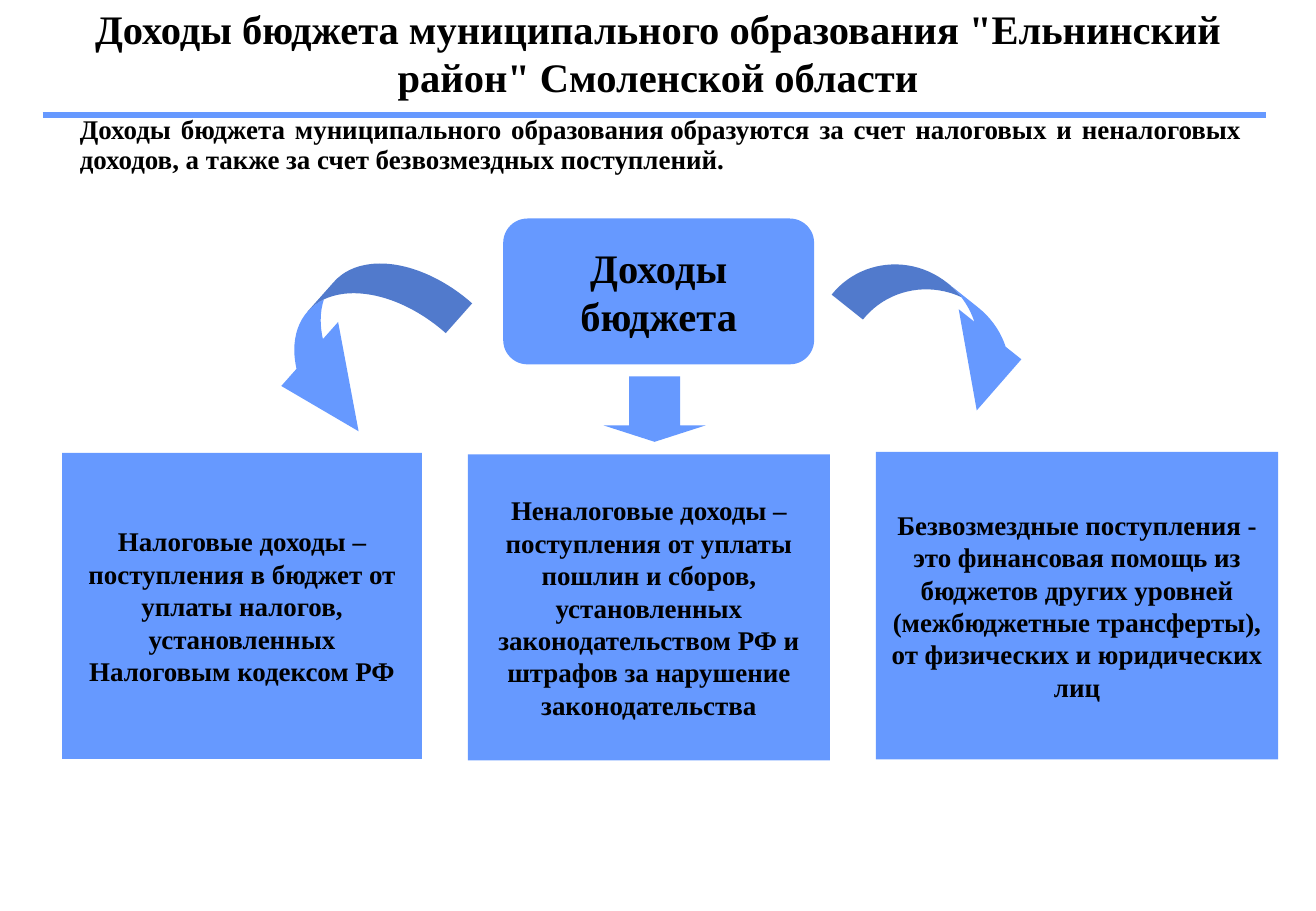
from lxml import etree
from pptx import Presentation
from pptx.dml.color import RGBColor
from pptx.enum.shapes import MSO_CONNECTOR, MSO_SHAPE
from pptx.enum.text import MSO_ANCHOR, PP_ALIGN
from pptx.oxml.ns import qn
from pptx.util import Cm, Pt

RECT = MSO_SHAPE.RECTANGLE
ROUND = MSO_SHAPE.ROUNDED_RECTANGLE
DOWN = MSO_SHAPE.DOWN_ARROW
CURVE_DOWN = MSO_SHAPE.CURVED_DOWN_ARROW
CURVE_UP = MSO_SHAPE.CURVED_UP_ARROW
STRAIGHT = MSO_CONNECTOR.STRAIGHT
TOP, MIDDLE = MSO_ANCHOR.TOP, MSO_ANCHOR.MIDDLE
CENTER, JUSTIFY = PP_ALIGN.CENTER, PP_ALIGN.JUSTIFY

FONT = "Times New Roman"
BLUE, BLACK = "6699FF", "000000"

TITLE = 'Доходы бюджета муниципального образования "Ельнинский район" Смоленской области'
INTRO = [
    ("Доходы бюджета муниципального образования", 16),
    (" ", 7),
    ("образуются за счет налоговых и неналоговых доходов, "
     "а также за счет безвозмездных поступлений.", 16),
]
# Left, top, width, height, side inset, text
CARDS = [
    (0, 4.9, 7.52, 6.4, 0.3,
     "Налоговые доходы – поступления в бюджет от уплаты налогов, "
     "установленных Налоговым кодексом РФ"),
    (8.48, 4.93, 7.57, 6.4, 0,
     "Неналоговые доходы – поступления от уплаты пошлин и сборов, установленных "
     "законодательством РФ и штрафов за нарушение законодательства"),
    (17.01, 4.88, 8.41, 6.43, 0.3,
     "Безвозмездные поступления - это финансовая помощь из бюджетов других уровней "
     "(межбюджетные трансферты), от физических и юридических лиц"),
]
# Kind, left, top, width, height, turn, adjustments
ARROWS = [
    (CURVE_DOWN, 16.1, 1.55, 4.72, 1.7, 38.6, (0.492, 0.987, 0.834)),
    (CURVE_UP, 3.93, 1.4, 4.47, 2.46, 131.6, (0.338, 0.727, 0.747)),
    (DOWN, 11.32, 3.3, 2.13, 1.37, 0, (0.5, 0.25)),
]


def color(code):
    return RGBColor.from_string(code)


def write(shape, runs, align, anchor, side, edge):
    """Fill a shape with one bold paragraph made of (text, size) runs."""
    frame = shape.text_frame
    frame.word_wrap = True
    frame.vertical_anchor = anchor
    frame.margin_left = frame.margin_right = Cm(side)
    frame.margin_top = frame.margin_bottom = Cm(edge)
    para = frame.paragraphs[0]
    para.alignment = align
    for text, size in runs:
        run = para.add_run()
        run.text = text
        run.font.name = FONT
        run.font.size = Pt(size)
        run.font.bold = True
        run.font.color.rgb = color(BLACK)
    return para


def block(slide, kind, left, top, width, height):
    """Add a plain blue shape."""
    shape = slide.shapes.add_shape(kind, Cm(left), Cm(top), Cm(width), Cm(height))
    shape.shadow.inherit = False
    shape.fill.solid()
    shape.fill.fore_color.rgb = color(BLUE)
    shape.line.fill.background()
    return shape


def header(slide, left, top, width):
    """Place the title, the rule and the opening sentence."""
    title = slide.shapes.add_textbox(Cm(left), Cm(top), Cm(width), Cm(0.97))
    write(title, [(TITLE, 24)], CENTER, MIDDLE, 0.25, 0.13)

    intro = slide.shapes.add_textbox(Cm(left + 0.05), Cm(top + 1.7), Cm(width), Cm(1.47))
    write(intro, INTRO, JUSTIFY, TOP, 0.25, 0.13).line_spacing = 0.9

    level = Cm(top + 1.8)
    rule = slide.shapes.add_connector(
        STRAIGHT, Cm(left - 0.48), level, Cm(left + width + 0.33), level)
    rule.line.color.rgb = color(BLUE)
    rule.line.width = Pt(3.75)
    etree.SubElement(rule.element.spPr, qn("a:effectLst"))


def scheme(slide, left, top):
    """Place the source of income, its three kinds and the arrows to them."""
    root = block(slide, ROUND, left + 9.22, top, 6.5, 3.05)
    write(root, [("Доходы бюджета", 24)], CENTER, MIDDLE, 0.36, 0.13)

    for x, y, width, height, side, text in CARDS:
        card = block(slide, RECT, left + x, top + y, width, height)
        write(card, [(text, 16)], CENTER, MIDDLE, side, 0)

    for kind, x, y, width, height, turn, adjust in ARROWS:
        arrow = block(slide, kind, left + x, top + y, width, height)
        arrow.rotation = turn
        for index, value in enumerate(adjust):
            arrow.adjustments[index] = value


def main():
    deck = Presentation()
    deck.slide_width, deck.slide_height = Cm(27.51), Cm(19.05)
    slide = deck.slides.add_slide(deck.slide_layouts[6])
    header(slide, 1.37, 0.61, 24.77)
    scheme(slide, 1.3, 4.57)
    deck.save("out.pptx")


if __name__ == "__main__":
    main()
